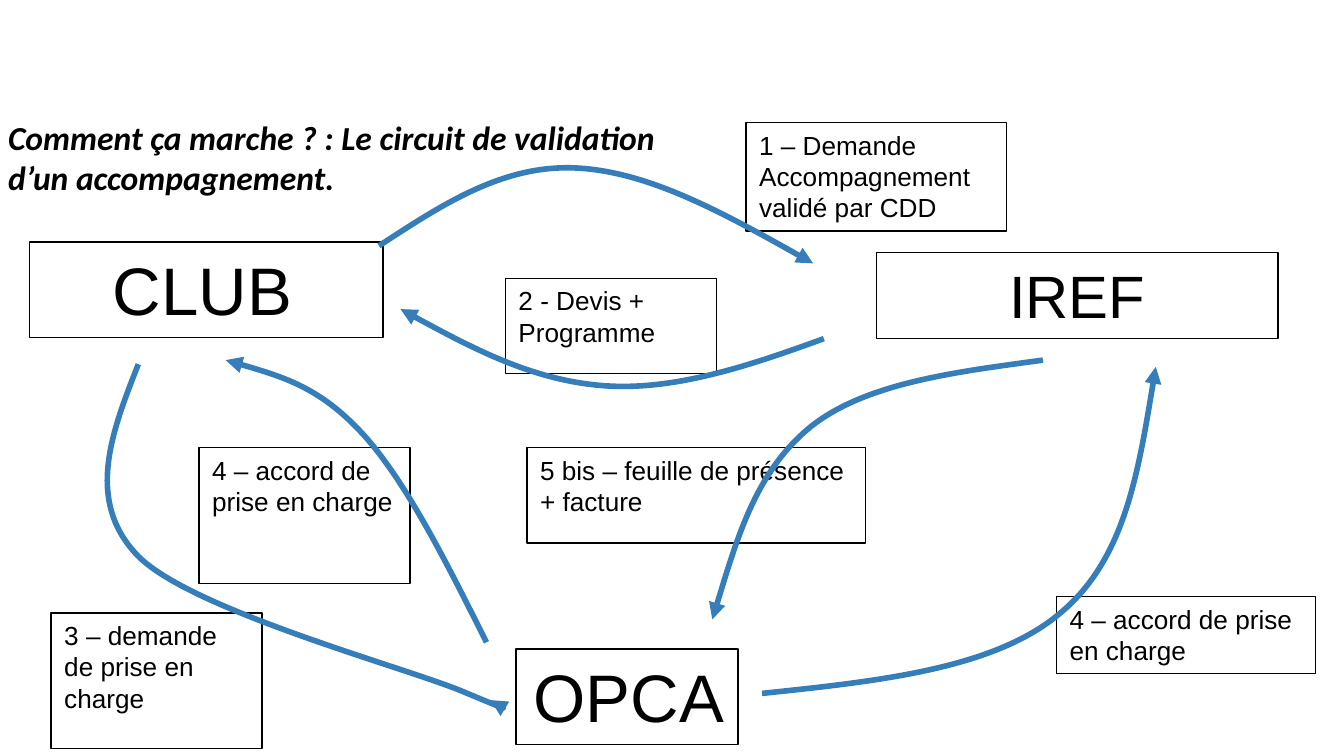
import pptx
import pptx.dml.color
import pptx.enum.shapes
import pptx.enum.text
import pptx.oxml
import pptx.oxml.ns
import pptx.util

COLUMNS, ROWS = 100, 56.25
COLORS = {"text": "000000", "border": "000000", "paper": "FFFFFF", "flow": "367EB9"}

HEADING = "Comment ça marche\u00a0?\u00a0: Le circuit de validation d’un accompagnement."
HEADING_AREA = (-0.4, 8.2, 52.4, 10.1)

ACTORS = [
    ("OPCA ", 36, "", (38.4, 48.3, 16.5, 7.1)),
    ("CLUB", 36, " ", (2.2, 18, 26.3, 7.1)),
    ("IREF", 32, "", (65.2, 18.8, 29.9, 6.4)),
]
STEPS = [
    ("1 – Demande Accompagnement validé par CDD", (55.5, 9.1, 19.4, 8.1), None),
    ("2 - Devis + Programme", (37.6, 20.7, 15.7, 7.1), None),
    ("3 – demande de prise en charge", (3.8, 45.6, 15.7, 10.1), "paper"),
    ("4 – accord de prise en charge", (14.8, 33.3, 15.7, 10.1), "paper"),
    ("4 – accord de prise en charge", (78.6, 44.4, 19.3, 5.7), None),
    ("5 bis – feuille de présence + facture", (39.2, 33.3, 25.2, 7.1), None),
]
FLOWS = {
    "club to iref": [(28.2, 18.3), (32.8, 15.3), (37.3, 12.3), (42.7, 12.5),
                     (48.1, 12.7), (54.3, 16.1), (60.5, 19.6)],
    "iref to club": [(61.3, 25.2), (55.8, 27.2), (50.2, 29.1), (44.9, 28.7),
                     (39.7, 28.3), (34.7, 25.7), (29.8, 23)],
    "opca to club": [(36.2, 47.8), (33.2, 41.8), (30.2, 35.8), (27, 32.3),
                     (23.8, 28.8), (20.3, 27.8), (16.8, 26.8)],
    "opca to iref": [(56.7, 51.6), (65.3, 50.7), (73.9, 49.8), (78.8, 45.7),
                     (83.7, 41.7), (84.8, 34.5), (86, 27.3)],
    "iref to opca": [(77.6, 26.8), (71, 27.7), (64.5, 28.5), (60.4, 31.7),
                     (56.3, 35), (54.7, 40.5), (53, 46.1)],
    "club to opca": [(10.3, 27.1), (8.3, 32.2), (6.3, 37.3), (10.3, 41.4),
                     (14.3, 45.4), (29.9, 49.6), (34.3, 51.4),
                     (38.6, 53.2), (37.6, 52.6), (36.5, 52.1)],
}

deck = pptx.Presentation()
deck.slide_width = pptx.util.Inches(10)
deck.slide_height = deck.slide_width * 9 // 16
slide = deck.slides.add_slide(deck.slide_layouts[5])


def color(name):
    return pptx.dml.color.RGBColor.from_string(COLORS[name])


def place(column, row):
    return (round(column * deck.slide_width / COLUMNS),
            round(row * deck.slide_height / ROWS))


def area(left, top, width, height):
    return place(left, top) + place(width, height)


def write(holder, text, size=14, face="Arial", align="LEFT", bold=False, italic=False,
          ending="", ending_size=14):
    frame = holder.text_frame
    frame.word_wrap = True
    frame.auto_size = pptx.enum.text.MSO_AUTO_SIZE.NONE
    frame.vertical_anchor = pptx.enum.text.MSO_ANCHOR.TOP
    paragraph = frame.paragraphs[0]
    paragraph.alignment = getattr(pptx.enum.text.PP_ALIGN, align)
    for words, points in ((text, size), (ending, ending_size)):
        if not words:
            continue
        run = paragraph.add_run()
        run.text = words
        run.font.size = pptx.util.Pt(points)
        run.font.name = face
        run.font.bold, run.font.italic = bold, italic
        run.font.color.rgb = color("text")


def outline(shape, line, width, fill=None):
    shape.shadow.inherit = False
    shape.line.color.rgb = color(line)
    shape.line.width = pptx.util.Pt(width)
    if fill:
        shape.fill.solid()
        shape.fill.fore_color.rgb = color(fill)
    else:
        shape.fill.background()


def add_box(text, box_area, fill=None, **text_format):
    box = slide.shapes.add_shape(pptx.enum.shapes.MSO_SHAPE.RECTANGLE, *area(*box_area))
    outline(box, "border", 0.75, fill)
    write(box, text, **text_format)


def add_flow(points):
    start, *controls = [place(*point) for point in points]
    builder = slide.shapes.build_freeform(*start)
    builder.add_line_segments(controls, close=False)
    flow = builder.convert_to_shape()
    outline(flow, "flow", 3)
    segments = list(flow._element.iter(pptx.oxml.ns.qn("a:lnTo")))
    for first in range(0, len(segments), 3):
        curve = pptx.oxml.parse_xml(f"<a:cubicBezTo {pptx.oxml.ns.nsdecls('a')}/>")
        segments[first].addprevious(curve)
        for segment in segments[first:first + 3]:
            curve.append(segment[0])
            segment.getparent().remove(segment)
    flow.line._get_or_add_ln().append(
        pptx.oxml.parse_xml(f"<a:tailEnd {pptx.oxml.ns.nsdecls('a')} type='triangle'/>"))


heading = slide.shapes.title
heading.left, heading.top, heading.width, heading.height = area(*HEADING_AREA)
write(heading, HEADING, size=18, face="Calibri", bold=True, italic=True)

for actor, size, ending, actor_area in ACTORS:
    add_box(actor, actor_area, size=size, align="CENTER", ending=ending)
for step, step_area, fill in STEPS:
    add_box(step, step_area, fill)
for route in FLOWS.values():
    add_flow(route)

deck.save("out.pptx")
